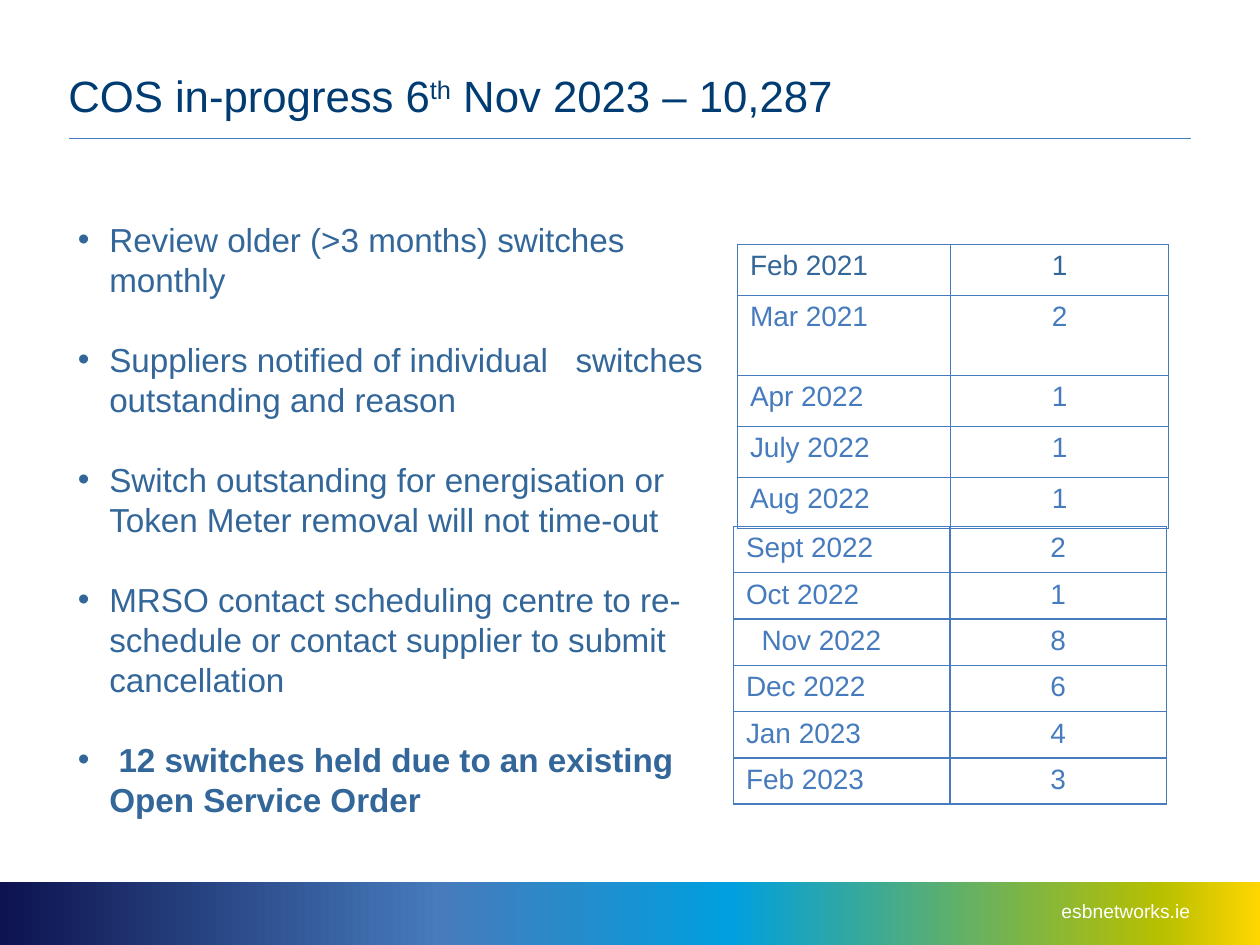
"""Builds the change-of-supplier progress slide with its two month tables."""
from dataclasses import dataclass

from lxml import etree
from pptx import Presentation
from pptx.dml.color import RGBColor
from pptx.enum.shapes import MSO_CONNECTOR, MSO_SHAPE
from pptx.enum.text import MSO_ANCHOR, PP_ALIGN
from pptx.oxml import parse_xml
from pptx.oxml.ns import nsdecls, qn
from pptx.util import Pt

RECT = MSO_SHAPE.RECTANGLE
STRAIGHT = MSO_CONNECTOR.STRAIGHT
TOP, MIDDLE = MSO_ANCHOR.TOP, MSO_ANCHOR.MIDDLE
LEFT, CENTER, RIGHT = PP_ALIGN.LEFT, PP_ALIGN.CENTER, PP_ALIGN.RIGHT


@dataclass(frozen=True)
class Theme:
    """Colours and type sizes of the slide."""
    font: str = "Arial"
    navy: str = "003C71"
    steel: str = "336699"
    blue: str = "467BBD"
    white: str = "FFFFFF"
    title: int = 25
    body: int = 19
    cell: int = 16
    footer: int = 11
    band: tuple = ((0, "0D134F"), (35, "467BBC"), (58, "009FDF"),
                   (92, "B6BF00"), (100, "FFD600"))


T = Theme()
WIDTH, HEIGHT = 720, 540
BAND_HEIGHT = 36
LINE_PITCH = 22.85

TITLE = [("COS in-progress 6", False), ("th", True), (" Nov 2023 – 10,287", False)]
BULLETS = [
    ("Review older (>3 months) switches monthly", False),
    ("Suppliers notified of individual   switches outstanding and reason", False),
    ("Switch outstanding for energisation or Token Meter removal will not time-out", False),
    ("MRSO contact scheduling centre to re- schedule or contact supplier to submit "
     "cancellation", False),
    (" 12 switches held due to an existing Open Service Order", True),
]
FOOTER = "esbnetworks.ie"
TABLES = [
    {"at": (421.4, 139.7), "cols": (121.8, 124.5), "row": 29.15, "tall": {1: 45.7},
     "first": T.steel, "inset": {},
     "data": [("Feb 2021", "1"), ("Mar 2021", "2"), ("Apr 2022", "1"),
              ("July 2022", "1"), ("Aug 2022", "1")]},
    {"at": (419.1, 300.8), "cols": (123.7, 123.7), "row": 26.45, "tall": {},
     "first": T.blue, "inset": {2: 8.9},
     "data": [("Sept 2022", "2"), ("Oct 2022", "1"), ("Nov 2022", "8"),
              ("Dec 2022", "6"), ("Jan 2023", "4"), ("Feb 2023", "3")]},
]


def apply(obj, values):
    for name, value in values.items():
        setattr(obj, name, value)


def add_run(p, text, size, color, bold=False):
    r = p.add_run()
    r.text = text
    apply(r.font, {"name": T.font, "size": Pt(size), "bold": bold})
    r.font.color.rgb = RGBColor.from_string(color)
    return r


def add_box(s, box, anchor=TOP, left=7.2, right=7.2):
    tf = s.shapes.add_textbox(*map(Pt, box)).text_frame
    apply(tf, {"word_wrap": True, "vertical_anchor": anchor,
               "margin_left": Pt(left), "margin_right": Pt(right),
               "margin_top": Pt(3.6), "margin_bottom": Pt(3.6)})
    return tf


def add_band(s):
    box = (0, HEIGHT - BAND_HEIGHT, WIDTH, BAND_HEIGHT)
    sp = s.shapes.add_shape(RECT, *map(Pt, box))
    sp.shadow.inherit = False
    sp.line.fill.background()
    stops = "".join(f'<a:gs pos="{pos * 1000}"><a:srgbClr val="{color}"/></a:gs>'
                    for pos, color in T.band)
    grad = parse_xml(f'<a:gradFill {nsdecls("a")} rotWithShape="1"><a:gsLst>{stops}'
                     '</a:gsLst><a:lin ang="0" scaled="0"/></a:gradFill>')
    sp.element.spPr.find(qn("a:prstGeom")).addnext(grad)
    p = add_box(s, (548, 510, 132.2, 21), MIDDLE, right=0).paragraphs[0]
    p.alignment = RIGHT
    add_run(p, FOOTER, T.footer, T.white)


def add_title(s):
    p = add_box(s, (39, 17.3, 536.4, 56.2), MIDDLE, 0, 0).paragraphs[0]
    p.line_spacing = Pt(48)
    for text, raised in TITLE:
        r = add_run(p, text, T.title, T.navy)
        if raised:
            r.font._element.set("baseline", "30000")
    rule = s.shapes.add_connector(STRAIGHT, Pt(39.6), Pt(79.2), Pt(680.4), Pt(79.2))
    rule.line.color.rgb = RGBColor.from_string(T.blue)
    rule.line.width = Pt(1)
    etree.SubElement(rule._element.spPr, qn("a:effectLst"))


def add_bullets(s):
    tf = add_box(s, (19.4, 121.7, 390.2, 352.8), right=5)
    for i, (text, bold) in enumerate(BULLETS):
        p = tf.add_paragraph() if i else tf.paragraphs[0]
        pPr = p._p.get_or_add_pPr()
        apply(pPr, {"lvl": 1})
        pPr.set("marL", str(Pt(36)))
        pPr.set("indent", str(-Pt(18)))
        color = etree.SubElement(pPr, qn("a:buClr"))
        etree.SubElement(color, qn("a:srgbClr"), val=T.steel)
        etree.SubElement(pPr, qn("a:buFont"), typeface=T.font)
        etree.SubElement(pPr, qn("a:buChar"), char="•")
        apply(p, {"line_spacing": Pt(LINE_PITCH),
                  "space_before": Pt(LINE_PITCH if i else 0)})
        add_run(p, text, T.body, T.steel, bold)


def add_borders(cell):
    tcPr = cell._tc.get_or_add_tcPr()
    for i, side in enumerate(("lnL", "lnR", "lnT", "lnB")):
        tcPr.insert(i, parse_xml(
            f'<a:{side} {nsdecls("a")} w="{Pt(1)}"><a:solidFill>'
            f'<a:srgbClr val="{T.blue}"/></a:solidFill></a:{side}>'))


def add_months(s, spec_):
    data, cols = spec_["data"], spec_["cols"]
    heights = [spec_["tall"].get(i, spec_["row"]) for i in range(len(data))]
    box = (*spec_["at"], sum(cols), sum(heights))
    table = s.shapes.add_table(len(data), len(cols), *map(Pt, box)).table
    apply(table, {"first_row": False, "horz_banding": False})
    for col, width in zip(table.columns, cols):
        col.width = Pt(width)
    for i, (row, height) in enumerate(zip(table.rows, heights)):
        row.height = Pt(height)
        for j, cell in enumerate(row.cells):
            cell.fill.background()
            add_borders(cell)
            inset = 0 if j else spec_["inset"].get(i, 0)
            apply(cell, {"margin_left": Pt(7.2 + inset), "vertical_anchor": TOP})
            p = cell.text_frame.paragraphs[0]
            p.alignment = CENTER if j else LEFT
            add_run(p, data[i][j], T.cell, T.blue if i else spec_["first"])


def main():
    prs = Presentation()
    apply(prs, {"slide_width": Pt(WIDTH), "slide_height": Pt(HEIGHT)})
    s = prs.slides.add_slide(prs.slide_layouts[6])
    add_band(s)
    add_title(s)
    add_bullets(s)
    for months in TABLES:
        add_months(s, months)
    prs.save("out.pptx")


if __name__ == "__main__":
    main()
